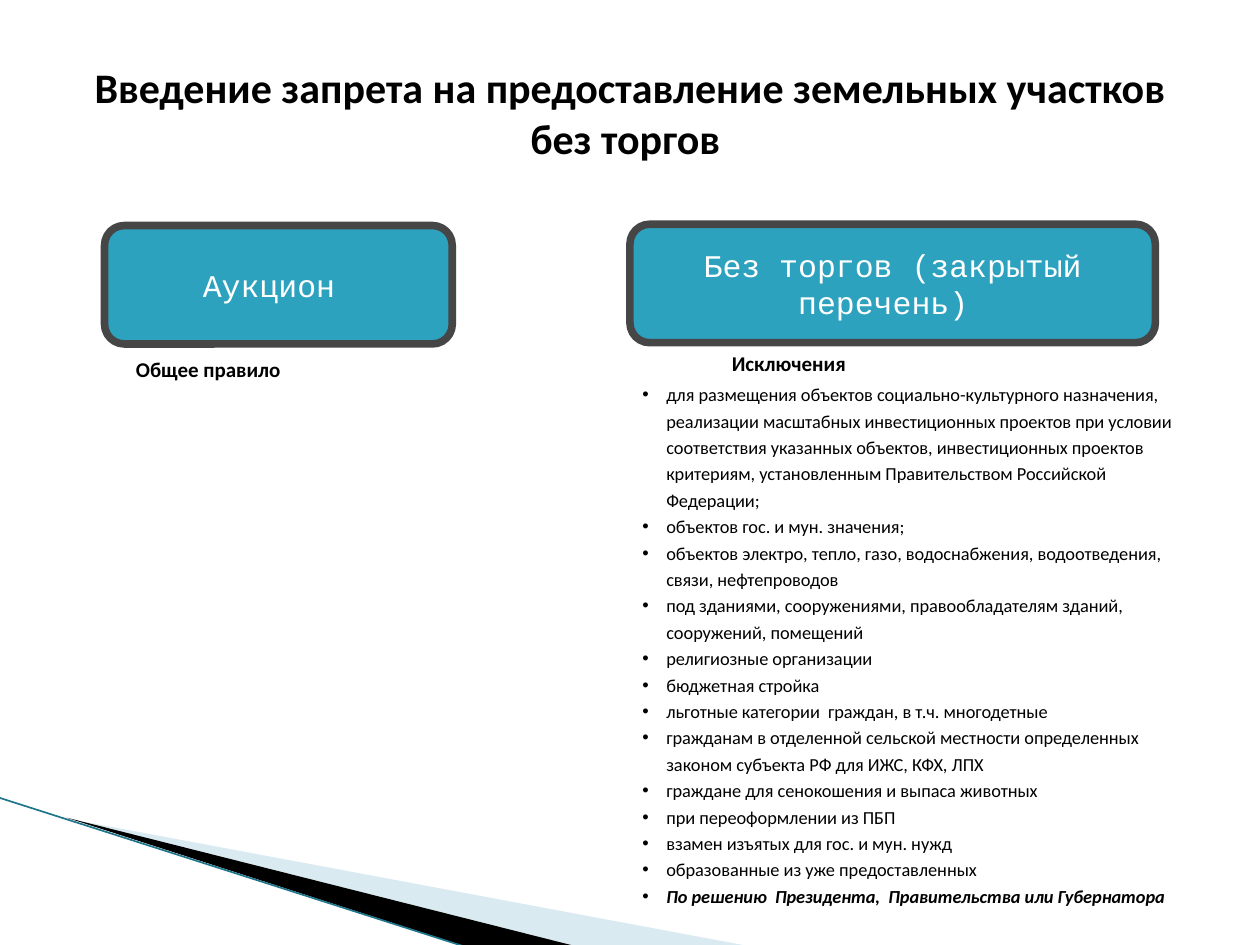
from dataclasses import dataclass

from lxml import etree
from pptx import Presentation
from pptx.dml.color import RGBColor
from pptx.enum.shapes import MSO_CONNECTOR, MSO_SHAPE
from pptx.enum.text import MSO_ANCHOR, MSO_AUTO_SIZE, PP_ALIGN
from pptx.oxml.ns import qn
from pptx.util import Inches, Pt

ROUNDED = MSO_SHAPE.ROUNDED_RECTANGLE
STRAIGHT = MSO_CONNECTOR.STRAIGHT
TOP, MIDDLE = MSO_ANCHOR.TOP, MSO_ANCHOR.MIDDLE
LEFT, CENTER = PP_ALIGN.LEFT, PP_ALIGN.CENTER
GROW = MSO_AUTO_SIZE.SHAPE_TO_FIT_TEXT
TITLE_ONLY = 5


@dataclass(frozen=True)
class Theme:
    black: RGBColor = RGBColor(0, 0, 0)
    white: RGBColor = RGBColor(255, 255, 255)
    teal: RGBColor = RGBColor(0x2D, 0xA2, 0xBF)
    border: RGBColor = RGBColor(0x46, 0x46, 0x46)
    wedge: RGBColor = RGBColor(0xA0, 0xCB, 0xDC)
    edge: RGBColor = RGBColor(0x1F, 0x76, 0x8B)
    body_font: str = "Calibri"
    box_font: str = "Courier New"
    title_size: float = 24
    box_size: float = 18
    label_size: float = 12
    list_size: float = 10.5


THEME = Theme()

TITLE = "Введение запрета на предоставление земельных участков без торгов "
EXCEPTIONS = [
    "для размещения объектов социально-культурного назначения, реализации масштабных "
    "инвестиционных проектов при условии соответствия указанных объектов, "
    "инвестиционных проектов критериям, установленным Правительством Российской Федерации;",
    "объектов гос. и мун. значения;",
    "объектов электро, тепло, газо, водоснабжения, водоотведения, связи, нефтепроводов",
    "под зданиями, сооружениями, правообладателям зданий, сооружений, помещений",
    "религиозные организации",
    "бюджетная стройка",
    "льготные категории  граждан, в т.ч. многодетные",
    "гражданам в отделенной сельской местности определенных законом субъекта РФ "
    "для ИЖС, КФХ, ЛПХ",
    "граждане для сенокошения и выпаса животных",
    "при переоформлении из ПБП",
    "взамен изъятых для гос. и мун. нужд",
    "образованные из уже предоставленных",
    "По решению  Президента,  Правительства или Губернатора",
]


def format_paragraph(paragraph, text, size, alignment=LEFT, color=THEME.black,
                     name=THEME.body_font, bold=False, italic=False):
    paragraph.text = text
    paragraph.alignment = alignment
    font = paragraph.font
    font.color.rgb = color
    values = {"name": name, "size": Pt(size), "bold": bold, "italic": italic}
    for attribute, value in values.items():
        setattr(font, attribute, value)


def set_frame(shape, anchor=TOP, auto_size=GROW):
    frame = shape.text_frame
    values = {"word_wrap": True, "auto_size": auto_size, "vertical_anchor": anchor}
    for attribute, value in values.items():
        setattr(frame, attribute, value)
    return frame


def add_wedge(slide, points, color, opacity=100):
    start, *rest = [(Inches(x), Inches(y)) for x, y in points]
    builder = slide.shapes.build_freeform(*start)
    builder.add_line_segments(rest, close=True)
    shape = builder.convert_to_shape()
    shape.shadow.inherit = False
    shape.fill.solid()
    shape.fill.fore_color.rgb = color
    shape.line.fill.background()
    if opacity < 100:
        fill_color = shape.fill._xPr.find(qn("a:solidFill"))[0]
        etree.SubElement(fill_color, qn("a:alpha"), val=str(opacity * 1000))


def add_edge(slide, start, end):
    points = [Inches(value) for value in (*start, *end)]
    connector = slide.shapes.add_connector(STRAIGHT, *points)
    connector.line.color.rgb = THEME.edge
    connector.line.width = Pt(0.95)
    etree.SubElement(connector._element.spPr, qn("a:effectLst"))


def add_title(slide):
    title = slide.shapes.title
    position = {"left": 0.43, "top": 0.44, "width": 9.14, "height": 0.91}
    for attribute, value in position.items():
        setattr(title, attribute, Inches(value))
    frame = set_frame(title)
    format_paragraph(frame.paragraphs[0], TITLE, THEME.title_size, CENTER, bold=True)


def add_box(slide, text, position):
    shape = slide.shapes.add_shape(ROUNDED, *map(Inches, position))
    shape.shadow.inherit = False
    shape.fill.solid()
    shape.fill.fore_color.rgb = THEME.teal
    shape.line.color.rgb = THEME.border
    shape.line.width = Pt(4.33)
    frame = set_frame(shape, MIDDLE, MSO_AUTO_SIZE.NONE)
    format_paragraph(frame.paragraphs[0], text, THEME.box_size, CENTER,
                     THEME.white, THEME.box_font)


def add_label(slide, text, position):
    frame = set_frame(slide.shapes.add_textbox(*map(Inches, position)))
    format_paragraph(frame.paragraphs[0], text, THEME.label_size, bold=True)


def add_bullet(paragraph):
    properties = paragraph._p.get_or_add_pPr()
    indent = Inches(0.19)
    properties.set("marL", str(indent))
    properties.set("indent", str(-indent))
    etree.SubElement(properties, qn("a:buFont"), typeface="Arial")
    etree.SubElement(properties, qn("a:buChar"), char="•")


def add_bullet_list(slide, items, position):
    frame = set_frame(slide.shapes.add_textbox(*map(Inches, position)))
    for index, item in enumerate(items):
        paragraph = frame.add_paragraph() if index else frame.paragraphs[0]
        add_bullet(paragraph)
        paragraph.line_spacing = 1.2
        # The closing item is emphasised
        last = index == len(items) - 1
        format_paragraph(paragraph, item, THEME.list_size, bold=last, italic=last)


def main():
    presentation = Presentation()
    presentation.slide_width = Inches(10)
    presentation.slide_height = Inches(7.5)
    slide = presentation.slides.add_slide(presentation.slide_layouts[TITLE_ONLY])

    # Corner decoration
    add_wedge(slide, [(0.55, 6.5), (5.95, 7.51), (4.56, 7.51)], THEME.wedge, 40)
    add_wedge(slide, [(0.53, 6.49), (4.57, 7.51), (3.72, 7.52)], THEME.black)
    add_edge(slide, (-0.01, 6.33), (3.71, 7.52))

    add_title(slide)

    # General rule
    add_box(slide, "Аукцион ", (0.83, 1.79, 2.76, 0.94))
    add_label(slide, "Общее правило", (0.98, 2.78, 2.76, 0.5))

    # Exceptions
    add_box(slide, "Без торгов (закрытый перечень) ", (5, 1.78, 4.17, 0.94))
    add_label(slide, "Исключения", (5.71, 2.73, 2.76, 0.3))
    add_bullet_list(slide, EXCEPTIONS, (5, 2.96, 4.57, 4.34))

    presentation.save("out.pptx")


if __name__ == "__main__":
    main()
